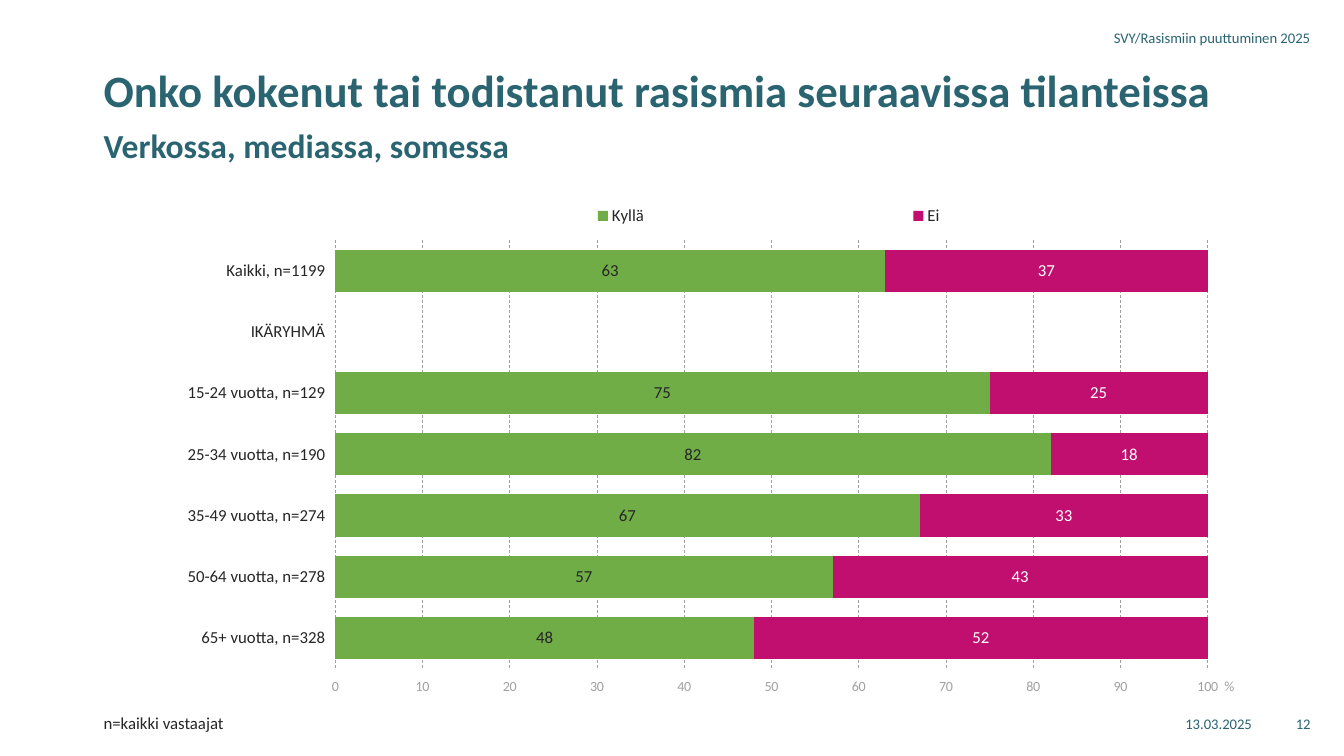
from lxml import etree
from pptx import Presentation
from pptx.chart.data import CategoryChartData
from pptx.dml.color import RGBColor
from pptx.enum.chart import (XL_AXIS_CROSSES, XL_CHART_TYPE, XL_LABEL_POSITION,
                             XL_LEGEND_POSITION, XL_TICK_LABEL_POSITION, XL_TICK_MARK)
from pptx.enum.dml import MSO_LINE
from pptx.enum.text import MSO_ANCHOR, PP_ALIGN
from pptx.oxml.ns import qn
from pptx.util import Cm, Pt

STACKED = XL_CHART_TYPE.BAR_STACKED
LABEL_CENTER = XL_LABEL_POSITION.CENTER
LEGEND_TOP = XL_LEGEND_POSITION.TOP
LABELS_LOW = XL_TICK_LABEL_POSITION.LOW
LABELS_HIGH = XL_TICK_LABEL_POSITION.HIGH
CROSS_MAXIMUM = XL_AXIS_CROSSES.MAXIMUM
NO_TICKS = XL_TICK_MARK.NONE
DASH = MSO_LINE.DASH
TOP, MIDDLE = MSO_ANCHOR.TOP, MSO_ANCHOR.MIDDLE
LEFT, RIGHT = PP_ALIGN.LEFT, PP_ALIGN.RIGHT

COLORS = {"teal": "2A6471", "dark": "262626", "gray": "A0A0A0",
          "yes": "70AD47", "no": "C10F70", "white": "FFFFFF"}

CATEGORIES = ["Kaikki, n=1199", "IKÄRYHMÄ", "15-24 vuotta, n=129", "25-34 vuotta, n=190",
              "35-49 vuotta, n=274", "50-64 vuotta, n=278", "65+ vuotta, n=328"]
# Name, values, bar color, label color
SERIES = [("Kyllä", [63, None, 75, 82, 67, 57, 48], "yes", "dark"),
          ("Ei", [37, None, 25, 18, 33, 43, 52], "no", "white")]


def set_layout(element, x, y, width=None, height=None, inner=False):
    """Place a chart part by fractions of the chart area."""
    for old_layout in element.findall(qn("c:layout")):
        element.remove(old_layout)
    layout = etree.Element(qn("c:layout"))
    manual = etree.SubElement(layout, qn("c:manualLayout"))
    settings = [("xMode", "edge"), ("yMode", "edge"), ("x", x), ("y", y),
                ("w", width), ("h", height)]
    if inner:
        settings.insert(0, ("layoutTarget", "inner"))
    for name, value in settings:
        if value is not None:
            etree.SubElement(manual, qn(f"c:{name}")).set("val", str(value))
    overlay = element.find(qn("c:overlay"))
    if overlay is None:
        element.insert(0, layout)
    else:
        overlay.addprevious(layout)


class SlideBuilder:
    def __init__(self, slide, font_name="Calibri"):
        self.slide = slide
        self.font_name = font_name

    def color(self, name):
        return RGBColor.from_string(COLORS[name])

    def style(self, font, size=12, color="dark", bold=False):
        font.name = self.font_name
        font.size = Pt(size)
        font.bold = bold
        font.color.rgb = self.color(color)

    def text(self, lines, left, top, width, height, sizes=(12,), color="dark",
             bold=False, align=LEFT, anchor=TOP, spacing=None):
        shape = self.slide.shapes.add_textbox(Cm(left), Cm(top), Cm(width), Cm(height))
        frame = shape.text_frame
        frame.word_wrap = True
        frame.vertical_anchor = anchor
        paragraph = frame.paragraphs[0]
        paragraph.alignment = align
        paragraph.line_spacing = spacing
        for index, (line, size) in enumerate(zip(lines, sizes)):
            if index:
                paragraph.add_line_break()
            run = paragraph.add_run()
            run.text = line
            self.style(run.font, size, color, bold)

    def chart(self, left, top, width, height):
        data = CategoryChartData()
        data.categories = CATEGORIES
        for name, values, *_ in SERIES:
            data.add_series(name, values)
        chart = self.slide.shapes.add_chart(
            STACKED, Cm(left), Cm(top), Cm(width), Cm(height), data).chart
        chart.has_title = False
        self.style(chart.font)
        self.bars(chart.plots[0])
        self.axes(chart)
        self.legend(chart)
        set_layout(chart.element.xpath("c:chart/c:plotArea")[0],
                   0.209, 0.126, 0.755, 0.808, inner=True)

    def bars(self, plot):
        plot.gap_width = 45
        plot.overlap = 100
        plot.vary_by_categories = False
        for series, (_, _, fill_color, label_color) in zip(plot.series, SERIES):
            series.format.fill.solid()
            series.format.fill.fore_color.rgb = self.color(fill_color)
            labels = series.data_labels
            labels.show_value = True
            labels.position = LABEL_CENTER
            labels.number_format = "#,##0"
            labels.number_format_is_linked = False
            self.style(labels.font, color=label_color)

    def axes(self, chart):
        category_axis, value_axis = chart.category_axis, chart.value_axis
        for axis, size, color in ((category_axis, 12, "dark"), (value_axis, 10, "gray")):
            axis.major_tick_mark = axis.minor_tick_mark = NO_TICKS
            axis.format.line.fill.background()
            self.style(axis.tick_labels.font, size, color)
        # Categories run downwards, so the high end is the bottom edge
        category_axis.reverse_order = True
        category_axis.tick_label_position = LABELS_LOW
        category_axis.crosses = CROSS_MAXIMUM
        value_axis.tick_label_position = LABELS_HIGH

        value_axis.minimum_scale = 0
        value_axis.maximum_scale = 100.01
        value_axis.major_unit = 10
        value_axis.tick_labels.number_format = "General"
        value_axis.tick_labels.number_format_is_linked = False
        gridline = value_axis.major_gridlines.format.line
        gridline.color.rgb = self.color("gray")
        gridline.width = Pt(0.5)
        gridline.dash_style = DASH

        # Unit sign beside the last axis number
        paragraph = value_axis.axis_title.text_frame.paragraphs[0]
        run = paragraph.add_run()
        run.text = "%"
        self.style(run.font, 10, "gray")
        set_layout(chart.element.xpath(".//c:valAx/c:title")[0], 0.976, 0.945)

    def legend(self, chart):
        chart.has_legend = True
        chart.legend.position = LEGEND_TOP
        chart.legend.include_in_layout = False
        self.style(chart.legend.font)
        set_layout(chart.element.xpath("c:chart/c:legend")[0], 0.208, 0.05, 0.752, 0.06)


def main():
    presentation = Presentation()
    presentation.slide_width = Cm(33.87)
    presentation.slide_height = Cm(19.05)
    builder = SlideBuilder(presentation.slides.add_slide(presentation.slide_layouts[6]))

    # Chart
    builder.chart(2.36, 4.37, 29.13, 13.36)

    # Header, date and page number
    small_print = [("13.03.2025", 24.18, 17.73, 7.62),
                   ("SVY/Rasismiin puuttuminen 2025", 21.84, 0.43, 11.43),
                   ("12", 32.16, 17.73, 1.12)]
    for line, left, top, width in small_print:
        builder.text([line], left, top, width, 1.02, sizes=(10.5,), color="teal",
                     align=RIGHT, anchor=MIDDLE)

    # Title and subtitle
    builder.text(["Onko kokenut tai todistanut rasismia seuraavissa tilanteissa",
                  "Verkossa, mediassa, somessa"], 2.36, 1.57, 29.13, 2.67,
                 sizes=(32, 24), color="teal", bold=True, spacing=Pt(35))

    # Base of respondents
    builder.text(["n=kaikki vastaajat"], 2.36, 17.88, 23.32, 0.71, spacing=0.9)

    presentation.save("out.pptx")


if __name__ == "__main__":
    main()
